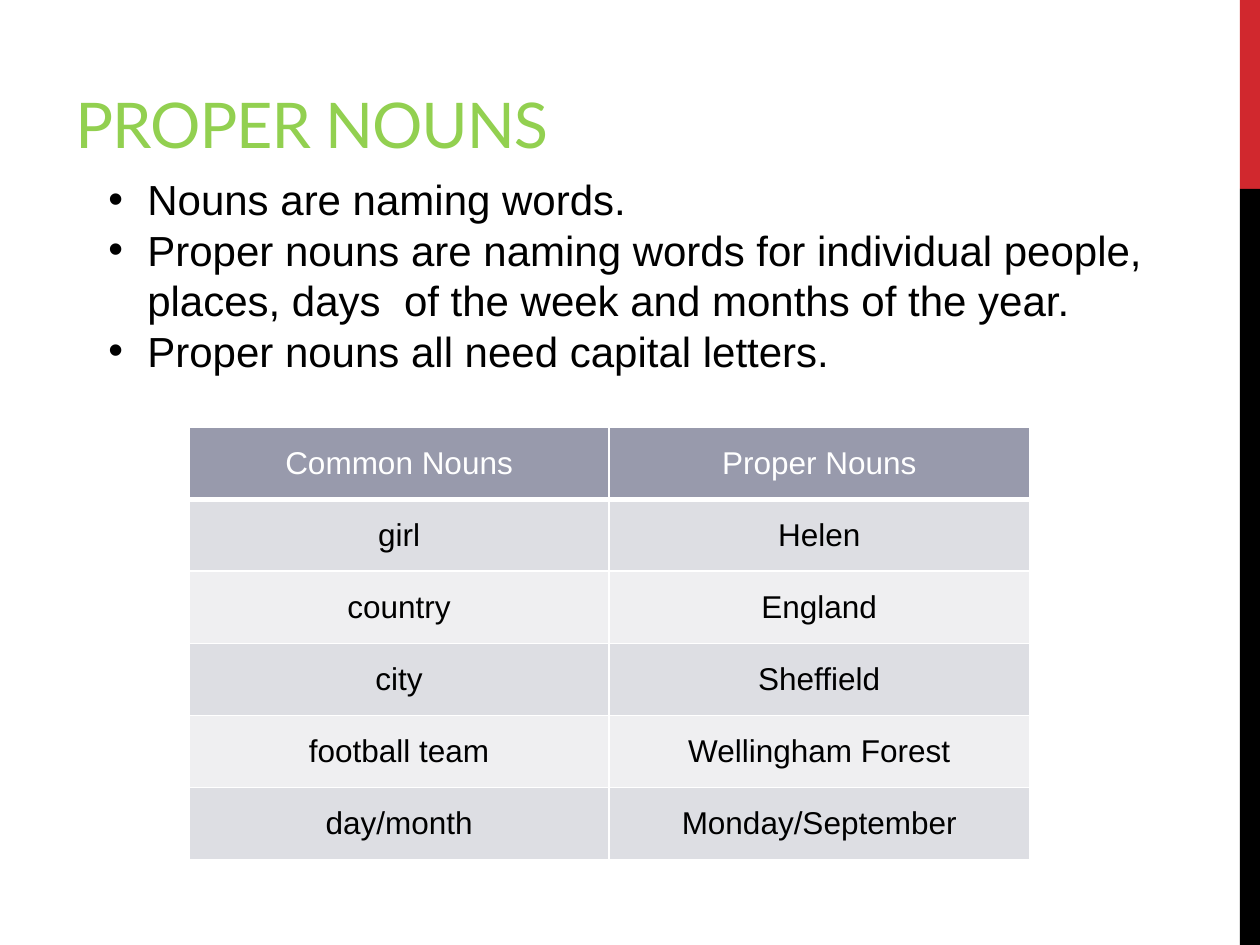
import pptx
import pptx.dml.color
import pptx.enum.shapes
import pptx.enum.text
import pptx.oxml
import pptx.oxml.ns
import pptx.util
from pptx.util import Inches

RED = pptx.dml.color.RGBColor(0xD1, 0x28, 0x2E)
BLACK = pptx.dml.color.RGBColor(0, 0, 0)
WHITE = pptx.dml.color.RGBColor(255, 255, 255)
GREEN = pptx.dml.color.RGBColor(0x92, 0xD0, 0x50)
HEADER_GREY = pptx.dml.color.RGBColor(0x98, 0x9A, 0xAC)
DARK_BAND = pptx.dml.color.RGBColor(0xDD, 0xDE, 0xE3)
LIGHT_BAND = pptx.dml.color.RGBColor(0xEF, 0xEF, 0xF1)

FACTS = [
    "Nouns are naming words.",
    "Proper nouns are naming words for individual people, places, days  of the week and months of the year.",
    "Proper nouns all need capital letters.",
]
NOUNS = [
    ("Common Nouns", "Proper Nouns"),
    ("girl", "Helen"),
    ("country", "England"),
    ("city", "Sheffield"),
    ("football team", "Wellingham Forest"),
    ("day/month", "Monday/September"),
]


def set_all(target, values):
    for name, value in values.items():
        setattr(target, name, value)


def write(para, text, size, font, color):
    span = para.add_run()
    span.text = text
    set_all(span.font, {"size": pptx.util.Pt(size), "name": font})
    span.font.color.rgb = color
    return span


def add_bar(page, top, height, color):
    bar = page.shapes.add_shape(
        pptx.enum.shapes.MSO_SHAPE.RECTANGLE,
        Inches(9.84), Inches(top), Inches(0.16), Inches(height),
    )
    bar.shadow.inherit = False
    bar.fill.solid()
    bar.fill.fore_color.rgb = color
    bar.line.fill.background()


def add_title(page, text):
    box = page.shapes.add_textbox(Inches(0.5), Inches(0.24), Inches(8.99), Inches(1.09))
    set_all(box.text_frame, {
        "word_wrap": True,
        "vertical_anchor": pptx.enum.text.MSO_ANCHOR.BOTTOM,
    })
    span = write(box.text_frame.paragraphs[0], text, 36, "Lato", GREEN)
    span.font._element.set("spc", "-60")


def add_bullet(para):
    properties = para._p.get_or_add_pPr()
    properties.set("marL", str(Inches(0.31)))
    properties.set("indent", str(Inches(-0.31)))
    namespace = pptx.oxml.ns.nsdecls("a")
    for markup in ('buFont {} typeface="Arial"', 'buChar {} char="•"'):
        properties.append(pptx.oxml.parse_xml(f"<a:{markup.format(namespace)}/>"))


def add_facts(page, facts):
    box = page.shapes.add_textbox(Inches(0.86), Inches(1.3), Inches(8.27), Inches(1.77))
    frame = box.text_frame
    set_all(frame, {
        "word_wrap": True,
        "auto_size": pptx.enum.text.MSO_AUTO_SIZE.SHAPE_TO_FIT_TEXT,
        "margin_left": 0,
        "margin_right": 0,
        "margin_top": Inches(0.08),
        "margin_bottom": Inches(0.08),
    })
    for index, fact in enumerate(facts):
        para = frame.add_paragraph() if index else frame.paragraphs[0]
        para.line_spacing = pptx.util.Pt(28.8)
        add_bullet(para)
        write(para, fact, 24, "Arial", BLACK)


def add_borders(cell, widths):
    properties = cell._tc.get_or_add_tcPr()
    for side, width in widths.items():
        properties.append(pptx.oxml.parse_xml(
            f'<a:ln{side} {pptx.oxml.ns.nsdecls("a")} w="{pptx.util.Pt(width)}">'
            f'<a:solidFill><a:srgbClr val="{WHITE}"/></a:solidFill></a:ln{side}>'
        ))


def add_noun_table(page, rows):
    frame = page.shapes.add_table(
        len(rows), len(rows[0]), Inches(1.5), Inches(3.39), Inches(6.67), Inches(3.43)
    )
    for row_index, row in enumerate(rows):
        is_header = row_index == 0
        band = DARK_BAND if row_index % 2 else LIGHT_BAND
        for column_index, text in enumerate(row):
            cell = frame.table.cell(row_index, column_index)
            add_borders(cell, {"L": 1, "R": 1, "T": 1, "B": 3 if is_header else 1})
            cell.fill.solid()
            cell.fill.fore_color.rgb = HEADER_GREY if is_header else band
            cell.vertical_anchor = pptx.enum.text.MSO_ANCHOR.MIDDLE
            para = cell.text_frame.paragraphs[0]
            para.alignment = pptx.enum.text.PP_ALIGN.CENTER
            span = write(para, text, 18, "Arial", WHITE if is_header else BLACK)
            span.font.bold = False


def main():
    deck = pptx.Presentation()
    set_all(deck, {"slide_width": Inches(10), "slide_height": Inches(7.5)})
    page = deck.slides.add_slide(deck.slide_layouts[6])
    add_bar(page, 0, 1.5, RED)
    add_bar(page, 1.5, 6, BLACK)
    add_title(page, "PROPER NOUNS")
    add_facts(page, FACTS)
    add_noun_table(page, NOUNS)
    deck.save("out.pptx")


if __name__ == "__main__":
    main()
